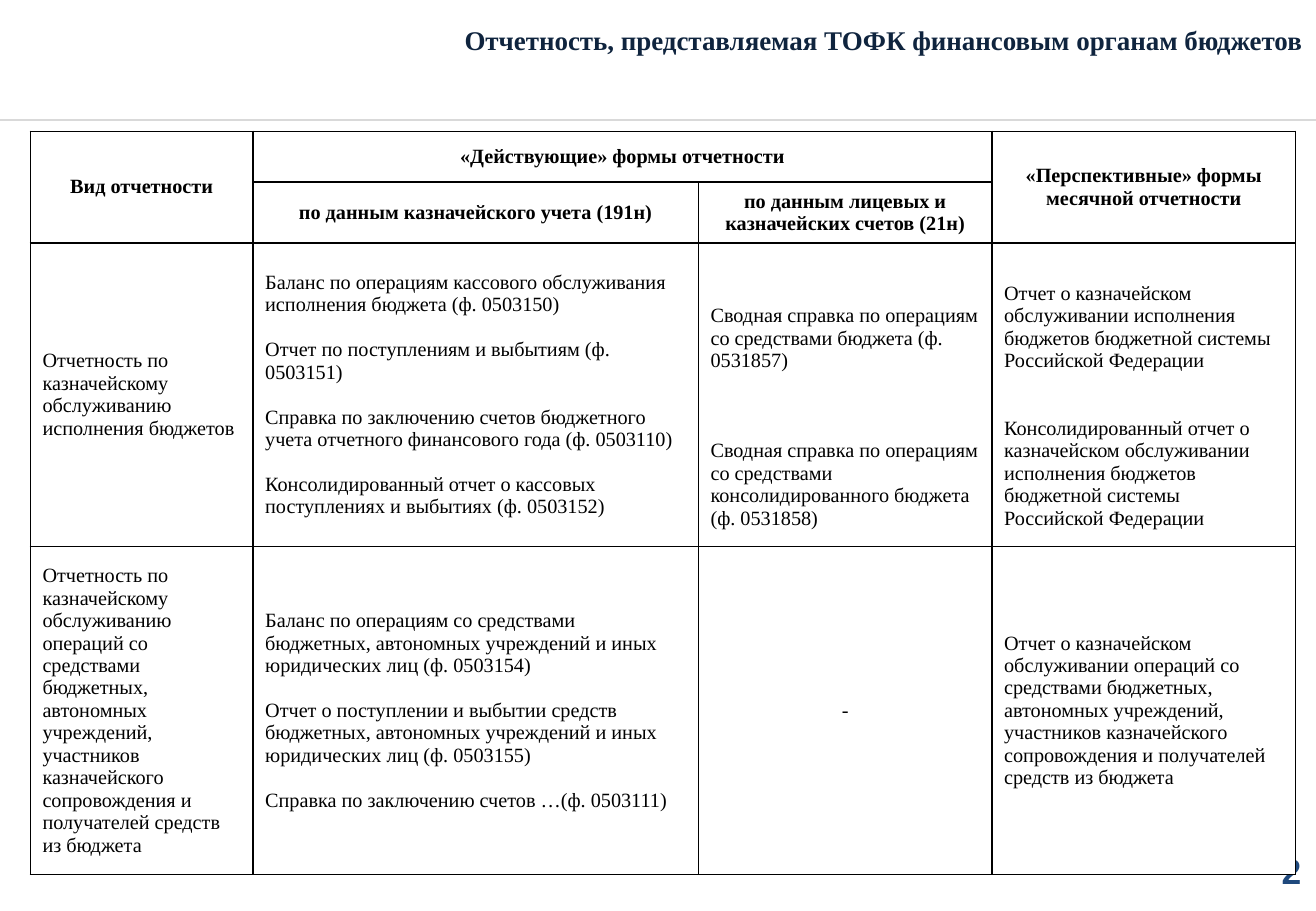
from lxml import etree
from pptx import Presentation
from pptx import util as u
from pptx.dml.color import RGBColor
from pptx.enum import text
from pptx.oxml import ns

Pt = u.Pt
NAVY = RGBColor(0x0F, 0x24, 0x3E)
BLUE = RGBColor(0x1F, 0x49, 0x7D)
GREY = RGBColor(0xD9, 0xD9, 0xD9)
BLACK = RGBColor(0, 0, 0)
WHITE = RGBColor(255, 255, 255)
SERIF, SANS = "Times New Roman", "Arial"

TITLE = "Отчетность, представляемая ТОФК финансовым органам бюджетов"
NUMBER = "2"

# (row, column, row span, column span, text)
HEADS = [
    (0, 0, 2, 1, "Вид отчетности"),
    (0, 1, 1, 2, "«Действующие» формы отчетности"),
    (0, 3, 2, 1, "«Перспективные» формы месячной отчетности"),
    (1, 1, 1, 1, "по данным казначейского учета (191н)"),
    (1, 2, 1, 1, "по данным лицевых и казначейских счетов (21н)"),
]

# Each cell: lines of space on top, lines of space between, paragraphs
BODY = [
    [
        (0, 0, ["Отчетность по казначейскому обслуживанию исполнения бюджетов"]),
        (0, 1, [
            "Баланс по операциям кассового обслуживания исполнения бюджета (ф. 0503150)",
            "Отчет по поступлениям и выбытиям (ф. 0503151)",
            "Справка по заключению счетов бюджетного учета отчетного финансового года (ф. 0503110)",
            "Консолидированный отчет о кассовых поступлениях и выбытиях (ф. 0503152)",
        ]),
        (2, 3, [
            "Сводная справка по операциям со средствами бюджета (ф. 0531857)",
            "Сводная справка по операциям со средствами консолидированного бюджета (ф. 0531858)",
        ]),
        (1, 2, [
            "Отчет о казначейском обслуживании исполнения бюджетов бюджетной системы Российской Федерации",
            "Консолидированный отчет о казначейском обслуживании исполнения бюджетов бюджетной системы Российской Федерации",
        ]),
    ],
    [
        (0, 0, ["Отчетность по казначейскому обслуживанию операций со средствами бюджетных, автономных учреждений, участников казначейского сопровождения и получателей средств из бюджета"]),
        (0, 1, [
            "Баланс по операциям со средствами бюджетных, автономных учреждений и иных юридических лиц (ф. 0503154)",
            "Отчет о поступлении и выбытии средств бюджетных, автономных учреждений и иных юридических лиц (ф. 0503155)",
            "Справка по заключению счетов …(ф. 0503111)",
        ]),
        (0, 0, ["-"]),
        (0, 0, ["Отчет о казначейском обслуживании операций со средствами бюджетных, автономных учреждений, участников казначейского сопровождения и получателей средств из бюджета"]),
    ],
]

WIDTHS = [132, 264, 174, 180]
HEIGHTS = [30.2, 36, 180, 194.4]
LEFT, TOP = 18, 77.8
LINE = 13.3
INSET = 3.6


def style(para, size, face, color, bold, align):
    para.alignment = align
    for run in para.runs:
        font = run.font
        font.size, font.name, font.bold = Pt(size), face, bold
        font.color.rgb = color


def place(shape, left, top, width, height):
    shape.left, shape.top = Pt(left), Pt(top)
    shape.width, shape.height = Pt(width), Pt(height)


def pad(frame, side, edge):
    frame.margin_left = frame.margin_right = Pt(side)
    frame.margin_top = frame.margin_bottom = Pt(edge)
    frame.word_wrap = True


def frame_cell(cell):
    """Give the cell black borders and a white fill."""
    props = cell._tc.get_or_add_tcPr()
    for side in ("a:lnL", "a:lnR", "a:lnT", "a:lnB"):
        line = etree.SubElement(props, ns.qn(side), w=str(Pt(1)))
        fill = etree.SubElement(line, ns.qn("a:solidFill"))
        etree.SubElement(fill, ns.qn("a:srgbClr"), val=str(BLACK))
    cell.fill.solid()
    cell.fill.fore_color.rgb = WHITE


def write(cell, paras, gap, bold, align):
    cell.vertical_anchor = text.MSO_ANCHOR.MIDDLE
    cell.text_frame.text = "\n".join(paras)
    for i, para in enumerate(cell.text_frame.paragraphs):
        style(para, 12, SERIF, BLACK, bold, align)
        if i:
            para.space_before = Pt(gap * LINE)


def main():
    deck = Presentation()
    deck.slide_width, deck.slide_height = Pt(780), Pt(540)
    slide = deck.slides.add_slide(deck.slide_layouts[5])
    left, mid, right = text.PP_ALIGN.LEFT, text.PP_ALIGN.CENTER, text.PP_ALIGN.RIGHT

    title = slide.shapes.title
    place(title, 135.5, 11.8, 645, 26)
    frame = title.text_frame
    frame.text = TITLE
    pad(frame, 8.6, 4.3)
    frame.auto_size = text.MSO_AUTO_SIZE.NONE
    frame.vertical_anchor = text.MSO_ANCHOR.MIDDLE
    frame.paragraphs[0].line_spacing = 0.9
    style(frame.paragraphs[0], 16, SERIF, NAVY, True, right)

    # The outline's box starts above the one line it draws
    pen = slide.shapes.build_freeform(0, Pt(41.8))
    pen.move_to(0, Pt(71.3))
    pen.add_line_segments([(Pt(780), Pt(71.3))], close=False)
    rule = pen.convert_to_shape()
    rule.shadow.inherit = False
    rule.fill.background()
    rule.line.color.rgb = GREY
    rule.line.width = Pt(1)

    page = slide.shapes.add_textbox(Pt(592), Pt(503.3), Pt(179.3), Pt(25))
    page.text_frame.text = NUMBER
    pad(page.text_frame, 0, 0)
    style(page.text_frame.paragraphs[0], 21, SANS, BLUE, True, right)

    table = slide.shapes.add_table(
        len(HEIGHTS), len(WIDTHS), Pt(LEFT), Pt(TOP),
        Pt(sum(WIDTHS)), Pt(sum(HEIGHTS))).table
    table.first_row = table.horz_banding = False
    for col, width in zip(table.columns, WIDTHS):
        col.width = Pt(width)
    for row, height in zip(table.rows, HEIGHTS):
        row.height = Pt(height)
    for cell in table.iter_cells():
        frame_cell(cell)

    for r, c, down, across, head in HEADS:
        cell = table.cell(r, c)
        if down * across > 1:
            cell.merge(table.cell(r + down - 1, c + across - 1))
        write(cell, [head], 0, True, mid)
    for r, row in enumerate(BODY, 2):
        for c, (above, gap, paras) in enumerate(row):
            cell = table.cell(r, c)
            cell.margin_top = Pt(INSET + above * LINE)
            write(cell, paras, gap, False, mid if paras == ["-"] else left)

    deck.save("out.pptx")


if __name__ == "__main__":
    main()
